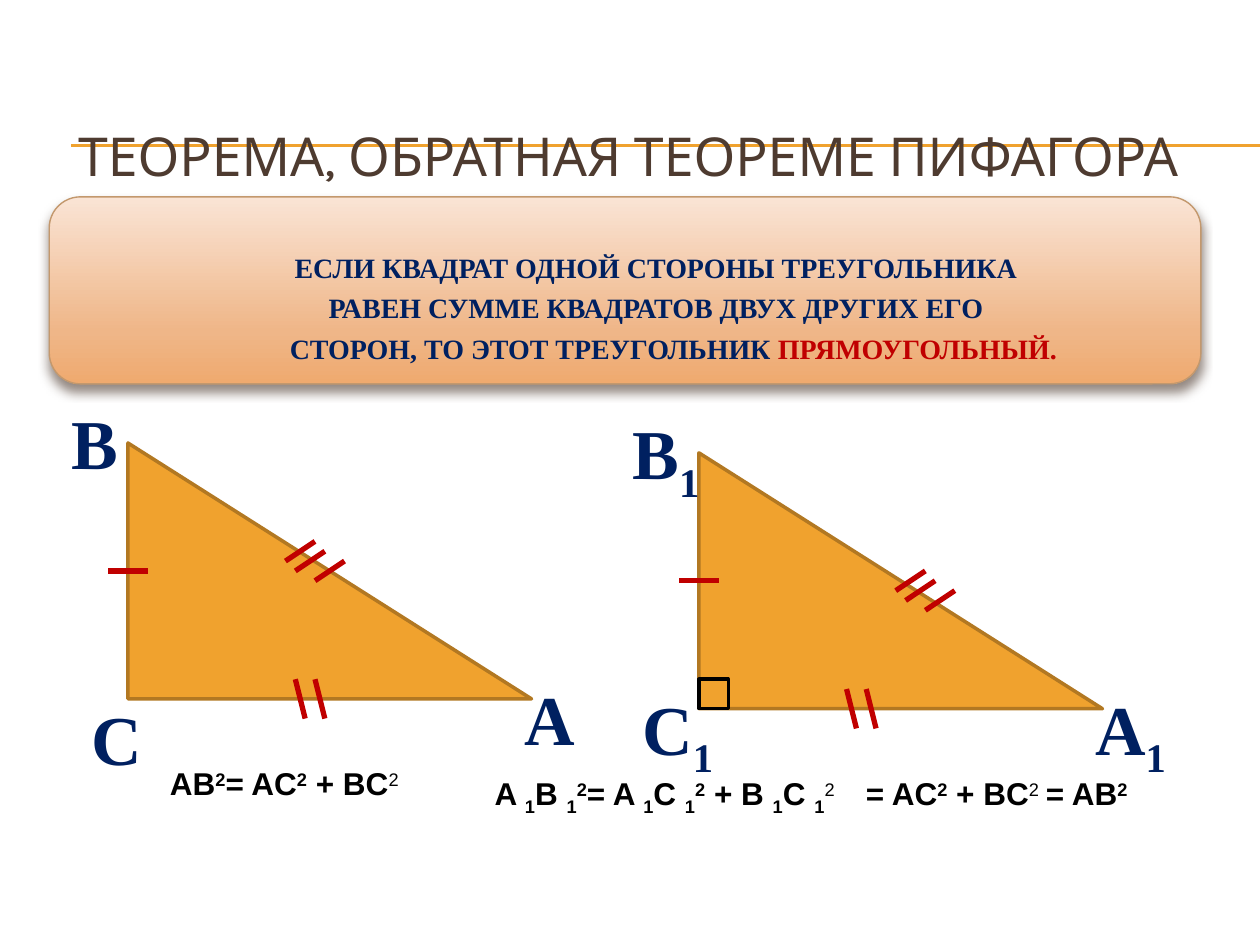
from copy import deepcopy
from dataclasses import dataclass

from lxml.etree import SubElement
from pptx import Presentation
from pptx.dml.color import RGBColor
from pptx.enum.shapes import MSO_CONNECTOR, MSO_SHAPE
from pptx.enum.text import MSO_ANCHOR, MSO_AUTO_SIZE, PP_ALIGN
from pptx.oxml.ns import qn
from pptx.util import Inches, Pt


@dataclass(frozen=True)
class Theme:
    title_font: str = "Karla"
    serif: str = "Times New Roman"
    sans: str = "Arial"
    brown: str = "4E3B30"
    navy: str = "002060"
    red: str = "C00000"
    black: str = "000000"
    orange: str = "F0A22E"
    orange_edge: str = "B27822"
    frame_edge: str = "C3986D"
    frame_stops: tuple = ((0, "FAE4D5"), (0.72, "EFB688"), (1, "EFAA6F"))
    title_size: float = 30.6
    statement_size: float = 16
    vertex_size: float = 40
    formula_size: float = 18


THEME = Theme()
UNIT = Inches(10) / 128  # the slide is a grid of 128 columns by 96 rows
BASELINES = {"_": -25000, "^": 30000, "~": 30000}  # "~" is a light superscript


def grid(*cells):
    return [round(cell * UNIT) for cell in cells]


def color(value):
    return RGBColor.from_string(value)


def add_run(paragraph, text, font, size, ink, bold=False, baseline=0):
    run = paragraph.add_run()
    run.text = text
    run.font.name, run.font.size, run.font.bold = font, Pt(size), bold
    run.font.color.rgb = color(ink)
    if baseline:
        run.font._element.set("baseline", str(baseline))


def add_math(slide, box, text, font, size, ink):
    """Text box in which _, ^ and ~ raise or lower the next character."""
    frame = slide.shapes.add_textbox(*grid(*box)).text_frame
    frame.word_wrap = True
    frame.auto_size = MSO_AUTO_SIZE.SHAPE_TO_FIT_TEXT
    paragraph = frame.paragraphs[0]
    plain, mark = "", ""
    for character in text:
        if character in BASELINES:
            if plain:
                add_run(paragraph, plain, font, size, ink, True)
            plain, mark = "", character
        elif mark:
            add_run(paragraph, character, font, size, ink, mark != "~", BASELINES[mark])
            mark = ""
        else:
            plain += character
    if plain:
        add_run(paragraph, plain, font, size, ink, True)


def add_line(slide, start, end, ink, width):
    line = slide.shapes.add_connector(MSO_CONNECTOR.STRAIGHT, *grid(*start, *end))
    line.line.color.rgb, line.line.width = color(ink), Pt(width)
    SubElement(line._element.spPr, qn("a:effectLst"))


def add_figure(slide, kind, box, edge, width):
    shape = slide.shapes.add_shape(kind, *grid(*box))
    shape.shadow.inherit = False
    shape.fill.solid()
    shape.fill.fore_color.rgb = color(THEME.orange)
    shape.line.color.rgb, shape.line.width = color(edge), Pt(width)
    return shape


def place(slide, placeholder, box):
    placeholder.left, placeholder.top, placeholder.width, placeholder.height = grid(*box)
    slide.shapes._spTree.append(placeholder._element)  # above the shapes drawn so far
    placeholder.text_frame.auto_size = MSO_AUTO_SIZE.NONE
    placeholder.text_frame.word_wrap = True
    return placeholder.text_frame


def add_title(slide, box):
    # Double rule behind the title
    for row in (14.72, 14.85):
        add_line(slide, (7.2, row), (128, row), THEME.orange, 0.75)
    frame = place(slide, slide.shapes.title, box)
    frame.vertical_anchor = MSO_ANCHOR.MIDDLE
    paragraph = frame.paragraphs[0]
    paragraph.alignment = PP_ALIGN.CENTER
    add_run(paragraph, "ТЕОРЕМА, ОБРАТНАЯ ТЕОРЕМЕ ПИФАГОРА",
            THEME.title_font, THEME.title_size, THEME.brown)


def add_statement(slide, box):
    left, top, width, height = box
    # Gradient panel with a soft shadow
    panel = add_figure(slide, MSO_SHAPE.ROUNDED_RECTANGLE, box, THEME.frame_edge, 0.79)
    panel.fill.gradient()
    panel.fill.gradient_angle = 270
    stop_list = panel._element.spPr.find(".//" + qn("a:gsLst"))
    stop_list.insert(1, deepcopy(stop_list[0]))
    for stop, (position, ink) in zip(panel.fill.gradient_stops, THEME.frame_stops):
        stop.position = position
        stop.color.rgb = color(ink)
    shadow = SubElement(panel._element.spPr.find(qn("a:effectLst")), qn("a:outerShdw"),
                        blurRad=str(Pt(6)), dist=str(Pt(4)), dir="5400000", rotWithShape="0")
    ink = SubElement(shadow, qn("a:srgbClr"), val=THEME.brown)
    SubElement(ink, qn("a:alpha"), val="60000")

    # Theorem, one paragraph a line
    frame = place(slide, slide.placeholders[1], (left + 1, top + 4.8, width + 5, height - 4.8))
    frame.vertical_anchor = MSO_ANCHOR.TOP
    lines = (
        (("ЕСЛИ КВАДРАТ ОДНОЙ СТОРОНЫ ТРЕУГОЛЬНИКА ", THEME.navy),),
        (("РАВЕН СУММЕ КВАДРАТОВ ДВУХ ДРУГИХ ЕГО ", THEME.navy),),
        (("СТОРОН, ТО ЭТОТ ТРЕУГОЛЬНИК ", THEME.navy), ("ПРЯМОУГОЛЬНЫЙ.", THEME.red)),
    )
    for index, parts in enumerate(lines):
        paragraph = frame.add_paragraph() if index else frame.paragraphs[0]
        properties = paragraph._element.get_or_add_pPr()
        properties.set("marL", str(Inches(0.22) if index == 2 else 0))
        properties.set("indent", "0")
        SubElement(properties, qn("a:buNone"))
        paragraph.alignment = PP_ALIGN.CENTER
        paragraph.space_before = Pt(4 if index else 0)
        for text, ink in parts:
            add_run(paragraph, text, THEME.serif, THEME.statement_size, ink, True)


def add_triangle(slide, box, labels, label_width, base_tick, long_tick, right_angle=False):
    """Labels and ticks are placed in grid cells from the box's corner."""
    left, top, width, height = box
    add_figure(slide, MSO_SHAPE.RIGHT_TRIANGLE, box, THEME.orange_edge, 2)
    if right_angle:
        add_figure(slide, MSO_SHAPE.RECTANGLE, (left, top + height - 3, 3, 3), THEME.black, 2)

    # Vertex names
    for name, column, row in labels:
        add_math(slide, (left + column, top + row, label_width, 9.9), name,
                 THEME.serif, THEME.vertex_size, THEME.navy)

    # One tick on the upright, two on the base, three on the long side
    long_column, long_row = long_tick
    ticks = [(-2, height / 2, 4, 0)]
    ticks += [(base_tick + step, height - 2, 1, 4) for step in (0, 2)]
    ticks += [(long_column + right, long_row + down, 3, -2)
              for right, down in ((0, 0), (1, 1), (3, 2))]
    for column, row, run, rise in ticks:
        start = (left + column, top + row)
        add_line(slide, start, (start[0] + run, start[1] + rise), THEME.red, 3)


def add_formulas(slide, box):
    left, top, _, height = box
    formulas = (
        (0, 0, 32, "AB^2= AC^2 + BC~2"),
        (33, 1, 46, "A _1B _1^2= A _1C _1^2 + B _1C _1~2"),
        (70.7, 1, 32, "= AC^2 + BC~2"),
        (89, 1, 22, "= AB^2"),
    )
    for column, row, width, text in formulas:
        add_math(slide, (left + column, top + row, width, height), text,
                 THEME.sans, THEME.formula_size, THEME.black)


def main():
    presentation = Presentation()
    presentation.slide_width, presentation.slide_height = Inches(10), Inches(7.5)
    slide = presentation.slides.add_slide(presentation.slide_layouts[1])
    add_title(slide, (6, 13.8, 115.6, 3.9))
    add_statement(slide, (5, 20, 117, 19))
    add_triangle(slide, (13, 45, 41, 26),
                 (("A", 39, 23), ("B", -7, -5), ("C", -5, 25)), 9, 17, (16, 12))
    add_triangle(slide, (71, 46, 41, 26),
                 (("A_1", 39, 23), ("B_1", -8, -5), ("C_1", -7, 23)), 11, 15, (20, 14), True)
    add_formulas(slide, (16, 77, 111, 5.1))
    presentation.save("out.pptx")


if __name__ == "__main__":
    main()
